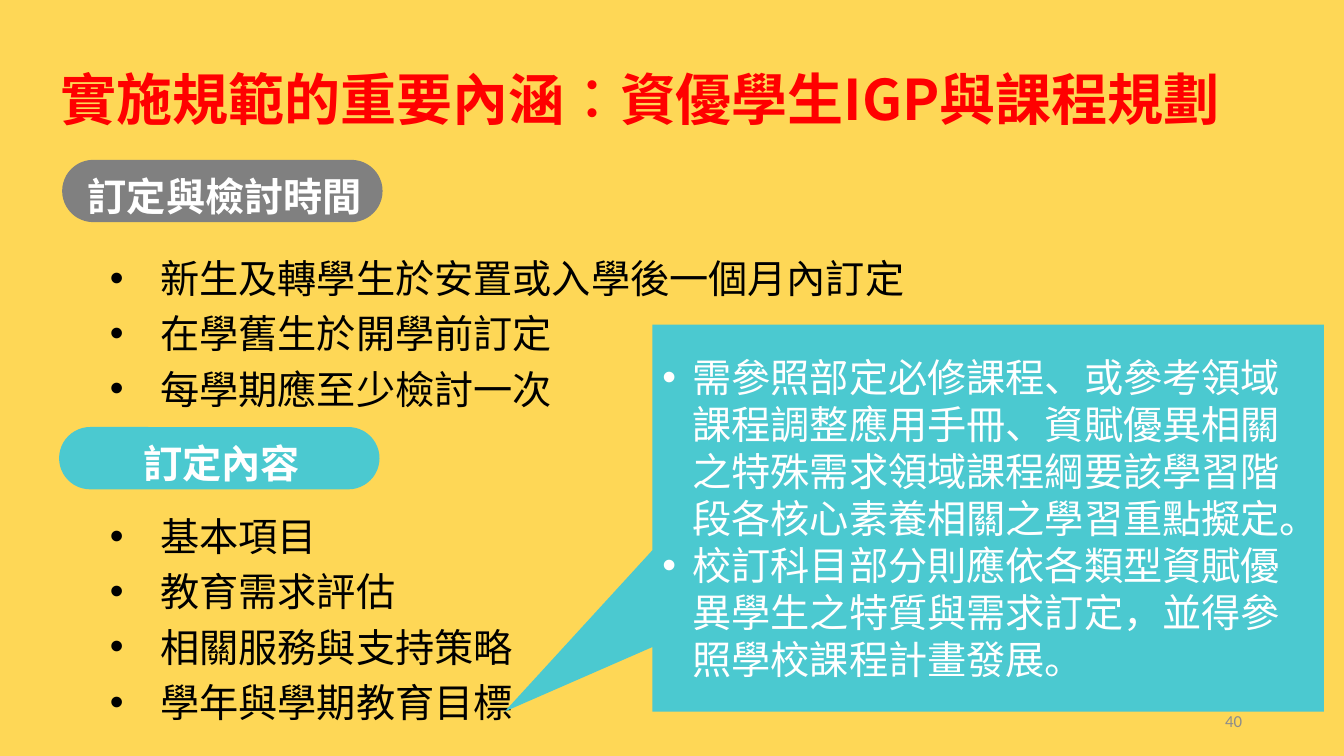
from dataclasses import dataclass

from pptx import Presentation, util as u
from pptx.dml.color import RGBColor
from pptx.enum import shapes, text
from pptx.oxml.ns import qn

YELLOW = RGBColor(0xFE, 0xD7, 0x56)
RED = RGBColor(0xFF, 0x00, 0x00)
BLACK = RGBColor(0x00, 0x00, 0x00)
WHITE = RGBColor(0xFF, 0xFF, 0xFF)
GRAY = RGBColor(0x80, 0x80, 0x80)
PALE_GRAY = RGBColor(0x8C, 0x8C, 0x8C)
TEAL = RGBColor(0x4B, 0xC9, 0xD0)

CJK_FONT = "Noto Sans CJK SC"
SLIDE_WIDTH, SLIDE_HEIGHT = u.Inches(13.33), u.Inches(7.5)


@dataclass(frozen=True)
class Area:
    """A rectangle in percent of the slide's width and height."""
    left: float
    top: float
    width: float
    height: float

    def emu(self) -> tuple[int, int, int, int]:
        return (round(self.left * SLIDE_WIDTH / 100), round(self.top * SLIDE_HEIGHT / 100),
                round(self.width * SLIDE_WIDTH / 100), round(self.height * SLIDE_HEIGHT / 100))


@dataclass(frozen=True)
class Style:
    size: float = 28
    color: RGBColor = BLACK
    bold: bool = False
    font: str = CJK_FONT
    align: text.PP_ALIGN = text.PP_ALIGN.LEFT
    indent: float = 0  # hanging bullet indent in inches
    line_pt: float = 0
    gap_pt: float = 0


@dataclass(frozen=True)
class BulletList:
    area: Area
    items: tuple[str, ...]


@dataclass(frozen=True)
class Heading:
    left: float
    top: float
    label: str
    fill: RGBColor


TITLE = "實施規範的重要內涵︰資優學生IGP與課程規劃"
LISTS = (
    BulletList(Area(8.18, 33.6, 71.72, 21.07), (
        "新生及轉學生於安置或入學後一個月內訂定",
        "在學舊生於開學前訂定",
        "每學期應至少檢討一次")),
    BulletList(Area(8.18, 67.73, 65.87, 28.53), (
        "基本項目", "教育需求評估", "相關服務與支持策略", "學年與學期教育目標")),
)
CALLOUT = BulletList(Area(48.54, 42.93, 49.96, 51.2), (
    "需參照部定必修課程、或參考領域課程調整應用手冊、資賦優異相關之特殊需求領域課程綱要"
    "該學習階段各核心素養相關之學習重點擬定。",
    "校訂科目部分則應依各類型資賦優異學生之特質與需求訂定，並得參照學校課程計畫發展。"))
HEADINGS = (
    Heading(4.73, 21.33, "訂定與檢討時間", GRAY),
    Heading(4.5, 56.67, "訂定內容", TEAL),
)

TITLE_STYLE = Style(size=40, color=RED, bold=True)
LIST_STYLE = Style(indent=0.5, line_pt=33.6, gap_pt=6)
CALLOUT_STYLE = Style(color=WHITE, indent=0.3)
HEADING_STYLE = Style(color=WHITE, bold=True, align=text.PP_ALIGN.CENTER)
NUMBER_STYLE = Style(size=12, color=PALE_GRAY, font="Calibri", align=text.PP_ALIGN.RIGHT)


def write(box, items: tuple[str, ...], style: Style, anchor=text.MSO_ANCHOR.TOP,
          padded: bool = True) -> None:
    """Fill a box with one paragraph per item."""
    frame = box.text_frame
    frame.word_wrap = True
    frame.auto_size = text.MSO_AUTO_SIZE.NONE
    frame.vertical_anchor = anchor
    if not padded:
        frame.margin_left = frame.margin_top = frame.margin_right = frame.margin_bottom = 0
    for index, item in enumerate(items):
        para = frame.add_paragraph() if index else frame.paragraphs[0]
        para.alignment = style.align
        if style.line_pt:
            para.line_spacing = u.Pt(style.line_pt)
        if index and style.gap_pt:
            para.space_before = u.Pt(style.gap_pt)
        if style.indent:
            add_bullet(para, style.indent)
        span = para.add_run()
        span.text = item
        span.font.size = u.Pt(style.size)
        span.font.bold = style.bold
        span.font.color.rgb = style.color
        span.font.name = style.font
        latin = span.font._element.find(qn("a:latin"))
        east_asian = latin.makeelement(qn("a:ea"), {"typeface": style.font})
        latin.addnext(east_asian)


def add_bullet(para, indent: float) -> None:
    props = para._p.get_or_add_pPr()
    props.set("marL", str(u.Inches(indent)))
    props.set("indent", str(-u.Inches(indent)))
    for tag, attributes in (("a:buFont", {"typeface": "Arial"}), ("a:buChar", {"char": "•"})):
        props.append(props.makeelement(qn(tag), attributes))


def add_filled(parent, kind: shapes.MSO_SHAPE, area: Area, fill: RGBColor):
    shape = parent.add_shape(kind, *area.emu())
    shape.shadow.inherit = False
    shape.fill.solid()
    shape.fill.fore_color.rgb = fill
    shape.line.fill.background()
    return shape


def add_heading(page, heading: Heading) -> None:
    """Group a rounded bar with its label."""
    group = page.shapes.add_group_shape()
    bar = add_filled(group.shapes, shapes.MSO_SHAPE.ROUNDED_RECTANGLE,
                     Area(heading.left, heading.top, 23.63, 7.87), heading.fill)
    bar.adjustments[0] = 0.5
    bar.line.color.rgb = heading.fill
    bar.line.width = u.Pt(2)
    label_area = Area(heading.left + 1.24, heading.top + 1.4, 21.53, 6.27)
    label = group.shapes.add_textbox(*label_area.emu())
    write(label, (heading.label,), HEADING_STYLE, padded=False)


def main() -> None:
    deck = Presentation()
    deck.slide_width, deck.slide_height = SLIDE_WIDTH, SLIDE_HEIGHT
    page = deck.slides.add_slide(deck.slide_layouts[5])
    page.background.fill.solid()
    page.background.fill.fore_color.rgb = YELLOW

    # Title
    title = page.shapes.title
    title.left, title.top, title.width, title.height = Area(3.75, 7.87, 96.25, 10.27).emu()
    write(title, (TITLE,), TITLE_STYLE)

    # Bullet lists
    for bullets in LISTS:
        box = page.shapes.add_textbox(*bullets.area.emu())
        write(box, bullets.items, LIST_STYLE, padded=False)

    # Callout pointing at the last item
    callout = add_filled(page.shapes, shapes.MSO_SHAPE.RECTANGULAR_CALLOUT, CALLOUT.area, TEAL)
    callout.adjustments[0] = -0.72
    callout.adjustments[1] = 0.5
    write(callout, CALLOUT.items, CALLOUT_STYLE, text.MSO_ANCHOR.MIDDLE)

    # Section headings
    for heading in HEADINGS:
        add_heading(page, heading)

    # Page number
    number = page.shapes.add_textbox(*Area(70.67, 92.67, 22.5, 5.33).emu())
    write(number, ("40",), NUMBER_STYLE, text.MSO_ANCHOR.MIDDLE)

    deck.save("out.pptx")


if __name__ == "__main__":
    main()
